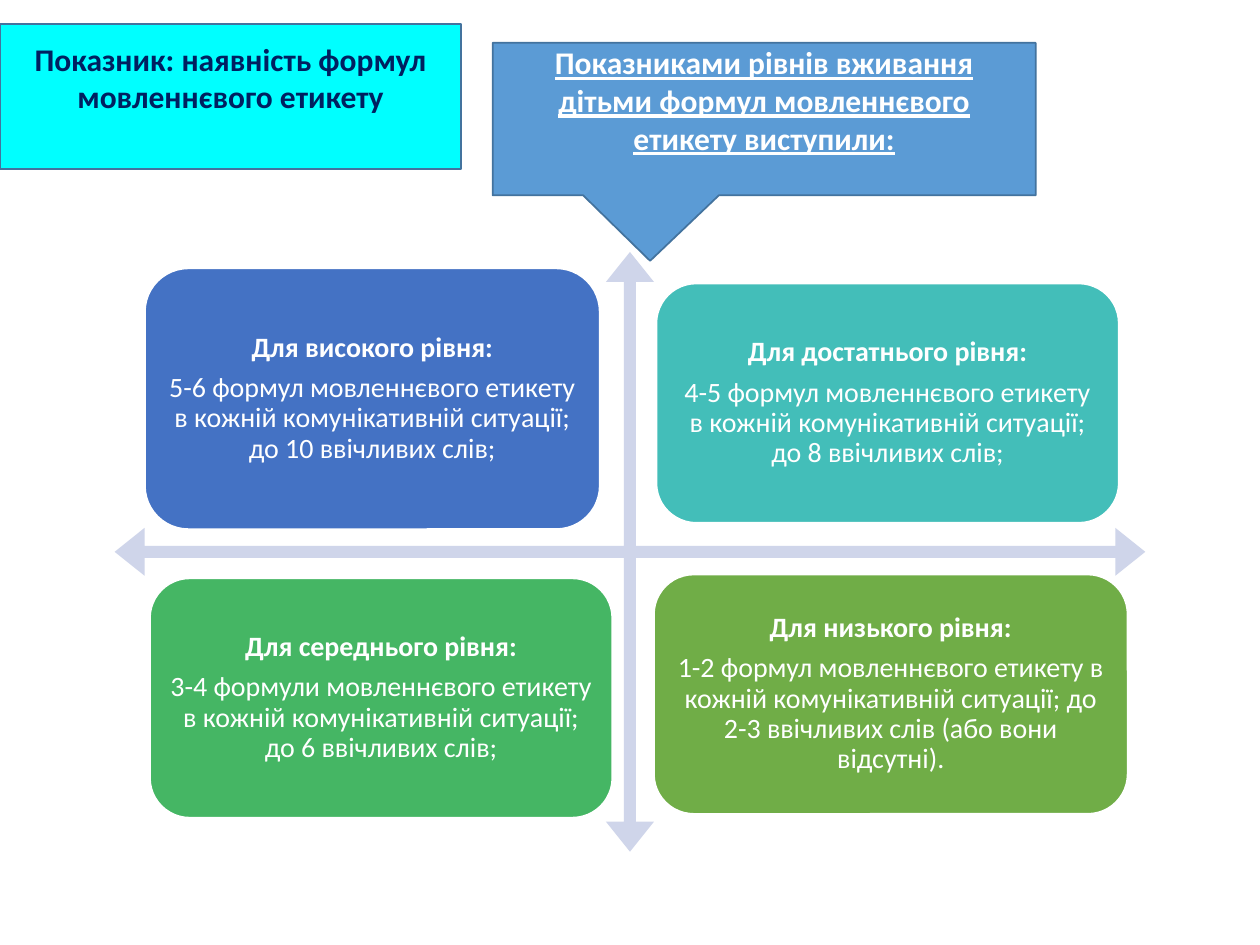
from dataclasses import dataclass

from pptx import Presentation
from pptx.dml.color import RGBColor as Rgb
from pptx.enum import shapes, text
from pptx.util import Inches, Pt


@dataclass(frozen=True)
class Theme:
    """Hold the colours, font and type sizes."""
    font: str = "Calibri"
    head: int = 18
    body: int = 16
    white: str = "FFFFFF"
    navy: str = "002060"
    cyan: str = "00FFFF"
    sky: str = "5B9BD5"
    edge: str = "43739E"
    cross: str = "CFD5EA"
    high: str = "4472C4"
    good: str = "43BEB9"
    mid: str = "45B664"
    low: str = "70AD47"


THEME = Theme()
KIND = shapes.MSO_SHAPE
LEVELS = [
    ((1.15, 2.13, 3.61, 2.07), THEME.high, "Для високого рівня:",
     "5-6 формул мовленнєвого етикету в кожній комунікативній ситуації; "
     "до 10 ввічливих слів;"),
    ((5.21, 2.25, 3.67, 1.9), THEME.good, "Для достатнього рівня:",
     "4-5 формул мовленнєвого етикету в кожній комунікативній ситуації; "
     "до 8 ввічливих слів;"),
    ((1.19, 4.59, 3.67, 1.9), THEME.mid, "Для середнього рівня:",
     "3-4 формули мовленнєвого етикету в кожній комунікативній ситуації; "
     "до 6 ввічливих слів;"),
    ((5.19, 4.56, 3.76, 1.9), THEME.low, "Для низького рівня:",
     "1-2 формул мовленнєвого етикету в кожній комунікативній ситуації; "
     "до 2-3 ввічливих слів (або вони відсутні)."),
]


def paint(shape, fill, line=None):
    """Fill and outline a shape."""
    shape.fill.solid()
    shape.fill.fore_color.rgb = Rgb.from_string(fill)
    if line:
        shape.line.color.rgb = Rgb.from_string(line)
        shape.line.width = Pt(1)
    else:
        shape.line.fill.background()


def draw(slide, kind, box, fill, line=None, adj=()):
    """Add a painted preset shape."""
    shape = slide.shapes.add_shape(kind, *map(Inches, box))
    shape.shadow.inherit = False
    for spot, value in enumerate(adj):
        shape.adjustments[spot] = value
    paint(shape, fill, line)
    return shape


def pad(frame, side, top, base):
    """Set wrapping, middle anchor and insets of a text frame."""
    frame.word_wrap = True
    frame.auto_size = text.MSO_AUTO_SIZE.NONE
    frame.vertical_anchor = text.MSO_ANCHOR.MIDDLE
    frame.margin_left = frame.margin_right = Inches(side)
    frame.margin_top, frame.margin_bottom = Inches(top), Inches(base)


def style(para, size, color, bold=True):
    """Centre a paragraph and set its font."""
    para.alignment = text.PP_ALIGN.CENTER
    font = para.font
    font.name, font.size, font.bold = THEME.font, Pt(size), bold
    font.color.rgb = Rgb.from_string(color)


def label(shape, words, color):
    """Write a heading in the upper part of a shape."""
    frame = shape.text_frame
    frame.text = words
    pad(frame, 0.1, 0.05, 0.35)
    style(frame.paragraphs[0], THEME.head, color)


def title(slide, box):
    """Place the title as a cyan panel."""
    shape = slide.shapes.title
    shape.left, shape.top, shape.width, shape.height = map(Inches, box)
    paint(shape, THEME.cyan, THEME.edge)
    label(shape, "Показник: наявність формул мовленнєвого етикету", THEME.navy)


def callout(slide, box):
    """Place the callout that introduces the levels."""
    shape = draw(slide, KIND.RECTANGULAR_CALLOUT, box, THEME.sky, THEME.edge,
                 (-0.21, 0.93))
    label(shape, "Показниками рівнів вживання дітьми формул мовленнєвого "
          "етикету виступили:", THEME.white)
    shape.text_frame.paragraphs[0].font.underline = True


def card(slide, box, fill, head, body):
    """Place one level card with its heading and description."""
    shape = draw(slide, KIND.ROUNDED_RECTANGLE, box, fill, THEME.white)
    frame = shape.text_frame
    frame.text = f"{head}\n{body}"
    pad(frame, 0.07, 0.07, 0.07)
    for para, bold in zip(frame.paragraphs, (True, False)):
        style(para, THEME.body, THEME.white, bold)
        para.line_spacing = 0.9
        para.space_after = Pt(5.6)


def matrix(slide, box):
    """Place the crossed arrows and the four level cards."""
    draw(slide, KIND.QUAD_ARROW, box, THEME.cross, adj=(0.02, 0.04, 0.05))
    for level in LEVELS:
        card(slide, *level)


def main():
    """Build and save the slide."""
    deck = Presentation()
    deck.slide_width, deck.slide_height = Inches(10), Inches(7.5)
    slide = deck.slides.add_slide(deck.slide_layouts[5])
    matrix(slide, (0.91, 2, 8.18, 4.76))
    title(slide, (0, 0.19, 3.66, 1.15))
    callout(slide, (3.91, 0.34, 4.31, 1.21))
    deck.save("out.pptx")


if __name__ == "__main__":
    main()
